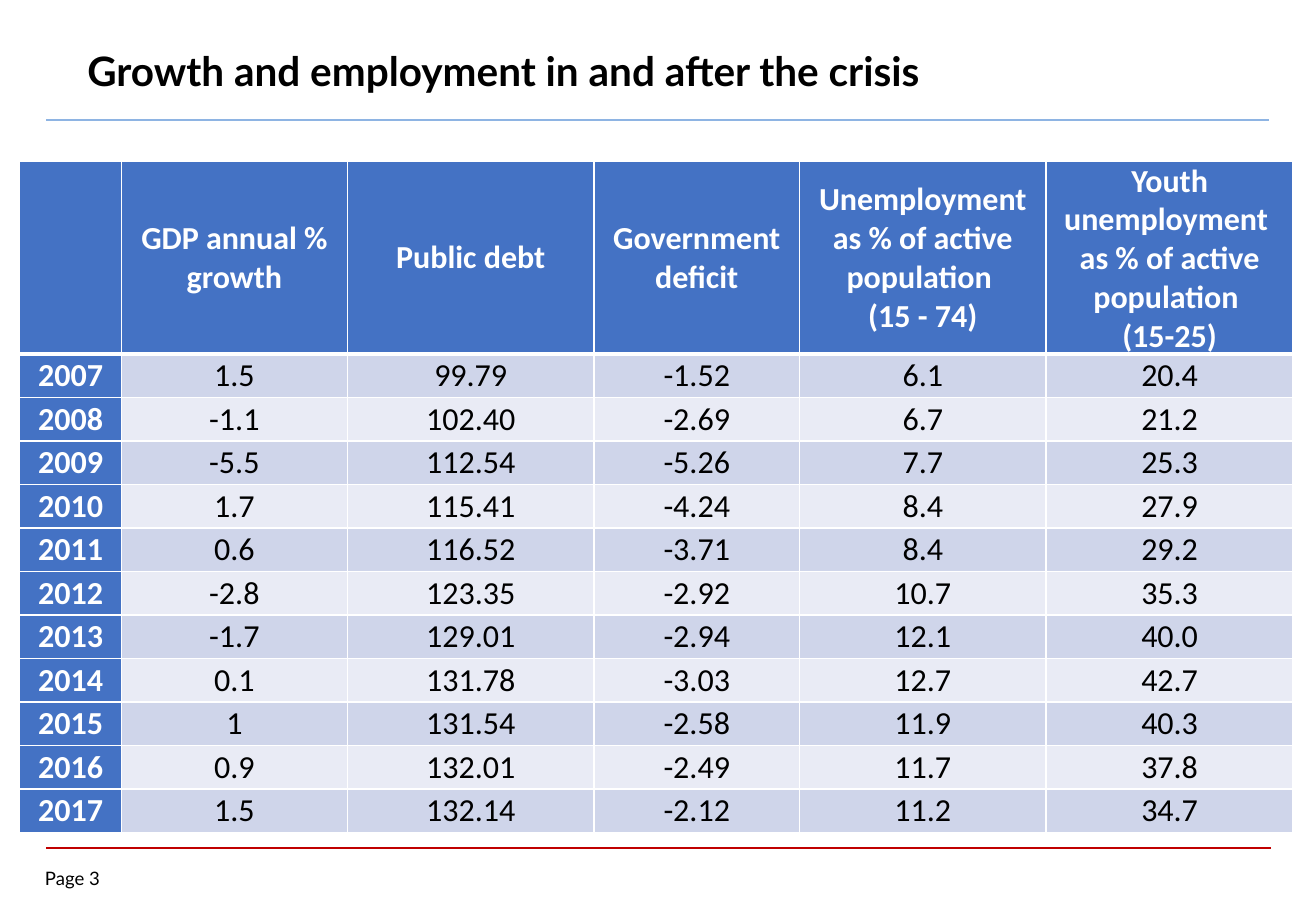
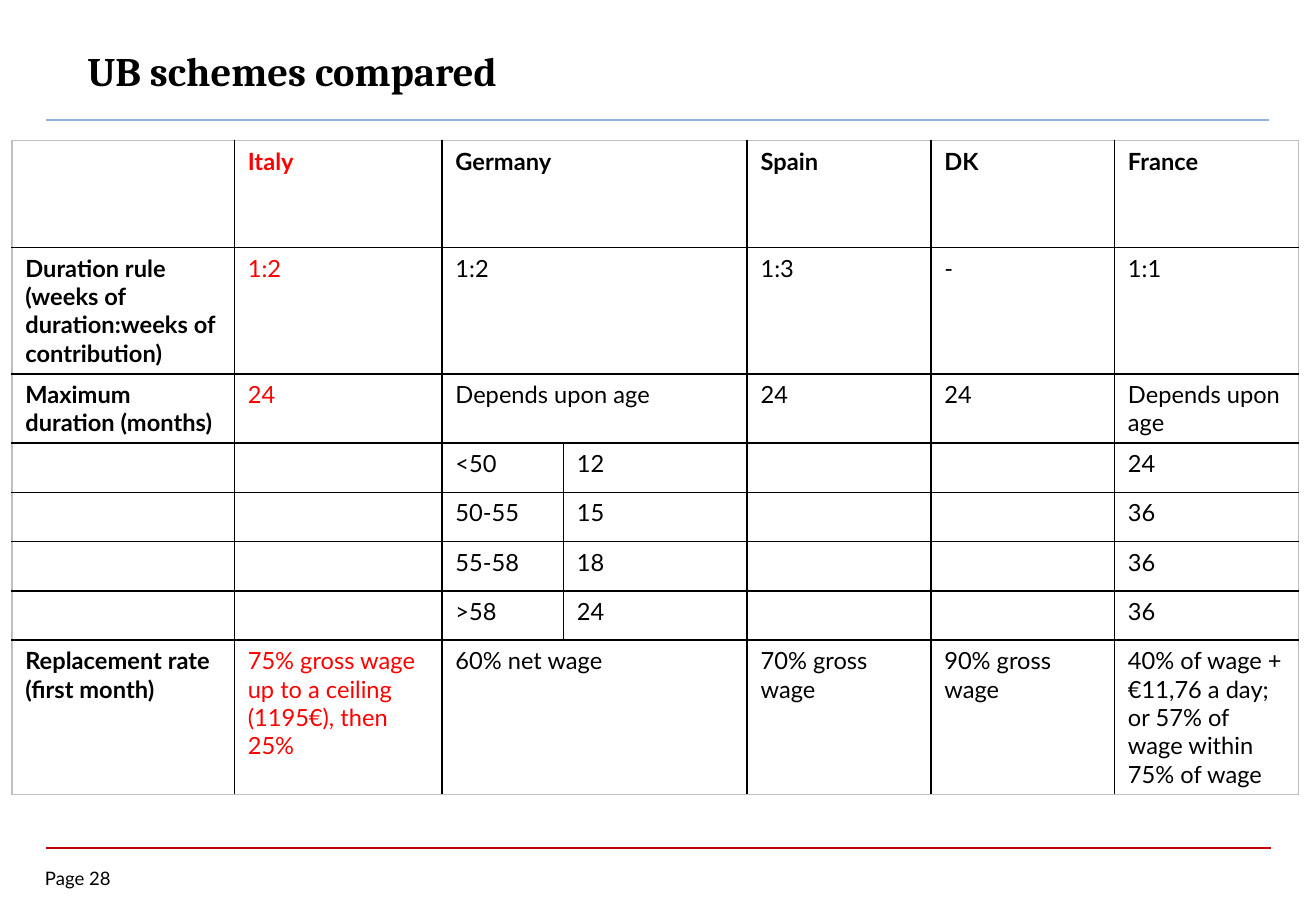
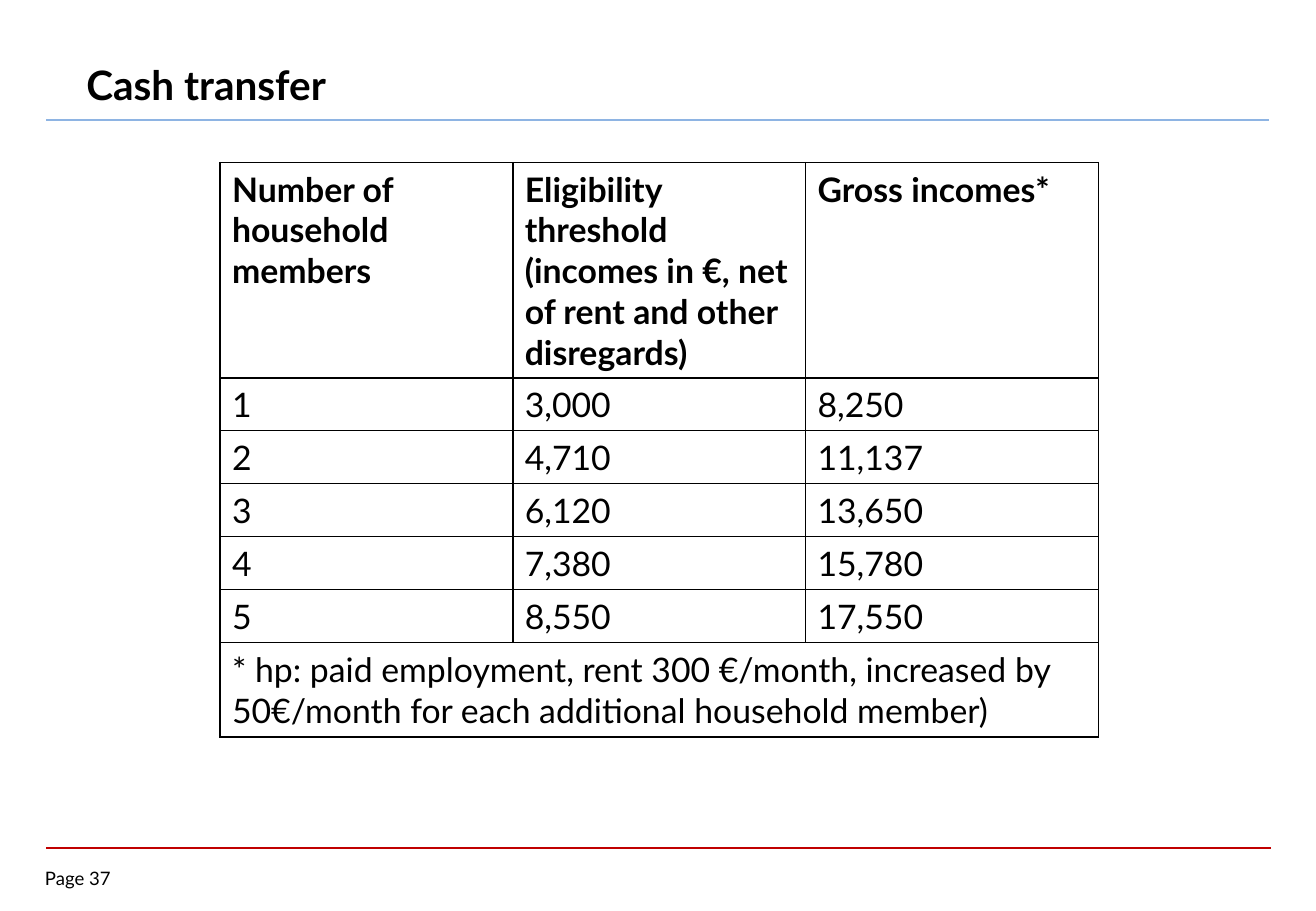
import pptx
import pptx.dml.color
import pptx.enum.shapes
import pptx.enum.text
import pptx.oxml
import pptx.oxml.ns
import pptx.util
from dataclasses import dataclass

Cm, Pt = pptx.util.Cm, pptx.util.Pt
ALIGN = pptx.enum.text.PP_ALIGN
ANCHOR = pptx.enum.text.MSO_ANCHOR


@dataclass(frozen=True)
class Theme:
    black: str = "000000"
    white: str = "FFFFFF"
    red: str = "FF0000"
    title_rule: str = "8EB4E3"
    footer_rule: str = "C00000"
    header: str = "4472C4"
    bands: tuple = ("CFD5EA", "E9EBF5")
    frame: str = "BFBFBF"
    font: str = "Lato"
    serif: str = "Cambria"
    data_font: str = "Calibri"
    title_size: int = 24
    page_size: int = 11


THEME = Theme()

# Content: None continues the cell on its left; \n starts a paragraph, \v a line
GROWTH_ROWS = [
    ("", "GDP annual % growth", "Public debt", "Government deficit",
     "Unemployment as % of active population \v(15 - 74)",
     "Youth unemployment \vas % of active population \v(15-25)"),
    ("2007", "1.5", "99.79", "-1.52", "6.1", "20.4"),
    ("2008", "-1.1", "102.40", "-2.69", "6.7", "21.2"),
    ("2009", "-5.5", "112.54", "-5.26", "7.7", "25.3"),
    ("2010", "1.7", "115.41", "-4.24", "8.4", "27.9"),
    ("2011", "0.6", "116.52", "-3.71", "8.4", "29.2"),
    ("2012", "-2.8", "123.35", "-2.92", "10.7", "35.3"),
    ("2013", "-1.7", "129.01", "-2.94", "12.1", "40.0"),
    ("2014", "0.1", "131.78", "-3.03", "12.7", "42.7"),
    ("2015", "1", "131.54", "-2.58", "11.9", "40.3"),
    ("2016", "0.9", "132.01", "-2.49", "11.7", "37.8"),
    ("2017", "1.5", "132.14", "-2.12", "11.2", "34.7"),
]
SCHEME_ROWS = [
    ("", "Italy", "Germany", None, "Spain", "DK", "France"),
    ("Duration rule\n(weeks of duration:weeks of contribution)",
     "1:2", "1:2", None, "1:3", "-", "1:1"),
    ("Maximum duration (months)", "24", "Depends upon age", None, "24", "24",
     "Depends upon age"),
    ("", "", "<50", "12", "", "", "24"),
    ("", "", "50-55", "15", "", "", "36"),
    ("", "", "55-58", "18", "", "", "36"),
    ("", "", ">58", "24", "", "", "36"),
    ("Replacement rate (first month)",
     "75% gross wage up to a ceiling (1195€), then 25%", "60% net wage", None,
     "70% gross wage", "90% gross wage",
     "40% of wage + €11,76 a day; or 57% of wage within 75% of wage"),
]
TRANSFER_ROWS = [
    ("Number of household members",
     "Eligibility threshold (incomes in €, net of rent and other disregards)",
     "Gross incomes*"),
    ("1", "3,000", "8,250"),
    ("2", "4,710", "11,137"),
    ("3", "6,120", "13,650"),
    ("4", "7,380", "15,780"),
    ("5", "8,550", "17,550"),
    ("* hp: paid employment, rent 300 €/month, increased by 50€/month"
     " for each additional household member)", None, None),
]

# Lengths in centimetres
SLIDES = [
    dict(title="Growth and employment in and after the crisis", page=3,
         title_font=THEME.font, title_at=(1.57, 0.84),
         rows=GROWTH_ROWS, at=(0.41, 3.38),
         widths=[2.13, 4.72, 5.16, 4.29, 5.16, 5.16],
         heights=[3.99] + [0.91] * 11,
         font=THEME.data_font, size=19, margins=(0.2, 0),
         align=ALIGN.CENTER, anchor=ANCHOR.MIDDLE,
         banded=True, bold_column=True, red_column=None,
         line=THEME.white, frame=THEME.white, header_line=3),
    dict(title="UB schemes compared", page=28,
         title_font=THEME.serif, title_at=(1.57, 0.84),
         rows=SCHEME_ROWS, at=(0.25, 2.94),
         widths=[4.65, 4.34, 2.54] + [3.84] * 4,
         heights=[2.24, 2.64, 1.44] + [1.03] * 4 + [3.22],
         font=THEME.font, size=14, margins=(0.28, 0.13),
         align=ALIGN.LEFT, anchor=ANCHOR.TOP,
         banded=False, bold_column=True, red_column=1,
         line=THEME.black, frame=THEME.frame, header_line=1),
    dict(title="Cash transfer", page=37,
         title_font=THEME.font, title_at=(1.55, 1.12),
         rows=TRANSFER_ROWS, at=(4.6, 3.4),
         widths=[6.12] * 3, heights=[4.5] + [1.1] * 5 + [1.97],
         font=THEME.font, size=20, margins=(0.25, 0.13),
         align=ALIGN.LEFT, anchor=ANCHOR.TOP,
         banded=False, bold_column=False, red_column=None,
         line=THEME.black, frame=THEME.black, header_line=1),
]
RULES = [(0.97, 17.73, 26.57, THEME.footer_rule, 1),
         (0.97, 2.51, 26.52, THEME.title_rule, 1.5)]


def rgb(color):
    return pptx.dml.color.RGBColor.from_string(color)


def format_paragraph(paragraph, font, size, color=THEME.black, bold=False,
                     align=ALIGN.LEFT):
    paragraph.alignment = align
    paragraph.font.name = font
    paragraph.font.size = Pt(size)
    paragraph.font.bold = bold
    paragraph.font.color.rgb = rgb(color)


# Shared rules, kept on the layout
def add_rules(slide):
    for left, top, right, color, width in RULES:
        connector = slide.shapes.add_connector(
            pptx.enum.shapes.MSO_CONNECTOR.STRAIGHT,
            Cm(left), Cm(top), Cm(right), Cm(top))
        connector.line.color.rgb = rgb(color)
        connector.line.width = Pt(width)
        properties = connector.element.spPr
        properties.append(properties.makeelement(
            pptx.oxml.ns.qn("a:effectLst"), {}))
        slide.slide_layout.shapes.element.append(connector.element)


def add_title_and_page(slide, content):
    title = slide.shapes.title
    title.left, title.top = map(Cm, content["title_at"])
    title.width, title.height = Cm(19.4), Cm(1.27)
    title.text_frame.text = content["title"]
    title.text_frame.auto_size = pptx.enum.text.MSO_AUTO_SIZE.NONE
    title.text_frame.vertical_anchor = ANCHOR.MIDDLE
    format_paragraph(title.text_frame.paragraphs[0], content["title_font"],
                     THEME.title_size, bold=True)

    frame = slide.shapes.add_textbox(Cm(0.94), Cm(18.14), Cm(1.85),
                                     Cm(0.56)).text_frame
    frame.margin_left = frame.margin_right = 0
    frame.margin_top = frame.margin_bottom = 0
    frame.word_wrap = True
    frame.text = f"Page {content['page']}"
    format_paragraph(frame.paragraphs[0], THEME.font, THEME.page_size)


def set_borders(cell, borders):
    properties = cell._tc.get_or_add_tcPr()
    for side in "LRTB":
        color, width = borders[side]
        properties.append(pptx.oxml.parse_xml(
            f'<a:ln{side} {pptx.oxml.ns.nsdecls("a")} w="{Pt(width)}">'
            f'<a:solidFill><a:srgbClr val="{color}"/></a:solidFill>'
            f'</a:ln{side}>'))


def cell_borders(content, row, column):
    line, frame = (content["line"], 1), (content["frame"], 1)
    under_header = (content["line"], content["header_line"])
    last_row = len(content["heights"]) - 1
    last_column = len(content["widths"]) - 1
    return {
        "L": frame if column == 0 else line,
        "R": frame if column == last_column else line,
        "T": frame if row == 0 else under_header if row == 1 else line,
        "B": (under_header if row == 0
              else frame if row == last_row else line),
    }


def fill_cell(cell, content, row, column):
    is_header = row == 0 or (column == 0 and content["bold_column"])
    set_borders(cell, cell_borders(content, row, column))
    color = THEME.black
    if content["banded"]:
        cell.fill.solid()
        cell.fill.fore_color.rgb = rgb(
            THEME.header if is_header else THEME.bands[(row - 1) % 2])
        color = THEME.white if is_header else THEME.black
    else:
        cell.fill.background()
    if column == content["red_column"]:
        color = THEME.red

    horizontal, vertical = map(Cm, content["margins"])
    cell.margin_left = cell.margin_right = horizontal
    cell.margin_top = cell.margin_bottom = vertical
    cell.vertical_anchor = content["anchor"]
    cell.text_frame.text = content["rows"][row][column] or ""
    for paragraph in cell.text_frame.paragraphs:
        format_paragraph(paragraph, content["font"], content["size"], color,
                         is_header, content["align"])


def add_data_table(slide, content):
    widths, heights = content["widths"], content["heights"]
    left, top = content["at"]
    table = slide.shapes.add_table(
        len(heights), len(widths), Cm(left), Cm(top),
        Cm(sum(widths)), Cm(sum(heights))).table
    table.first_row = table.horz_banding = False
    for column, width in zip(table.columns, widths):
        column.width = Cm(width)
    for row, height in zip(table.rows, heights):
        row.height = Cm(height)

    for row, texts in enumerate(content["rows"]):
        for column in range(len(texts)):
            fill_cell(table.cell(row, column), content, row, column)
        # Join each cell with the continuations on its right
        for column, text in enumerate(texts):
            end = column
            while end + 1 < len(texts) and texts[end + 1] is None:
                end += 1
            if text is not None and end > column:
                table.cell(row, column).merge(table.cell(row, end))


def main():
    presentation = pptx.Presentation()
    presentation.slide_width, presentation.slide_height = Cm(27.51), Cm(19.05)
    layout = presentation.slide_layouts.get_by_name("Title Only")
    for number, content in enumerate(SLIDES):
        slide = presentation.slides.add_slide(layout)
        if number == 0:
            add_rules(slide)
        add_title_and_page(slide, content)
        add_data_table(slide, content)
    presentation.save("out.pptx")


if __name__ == "__main__":
    main()
